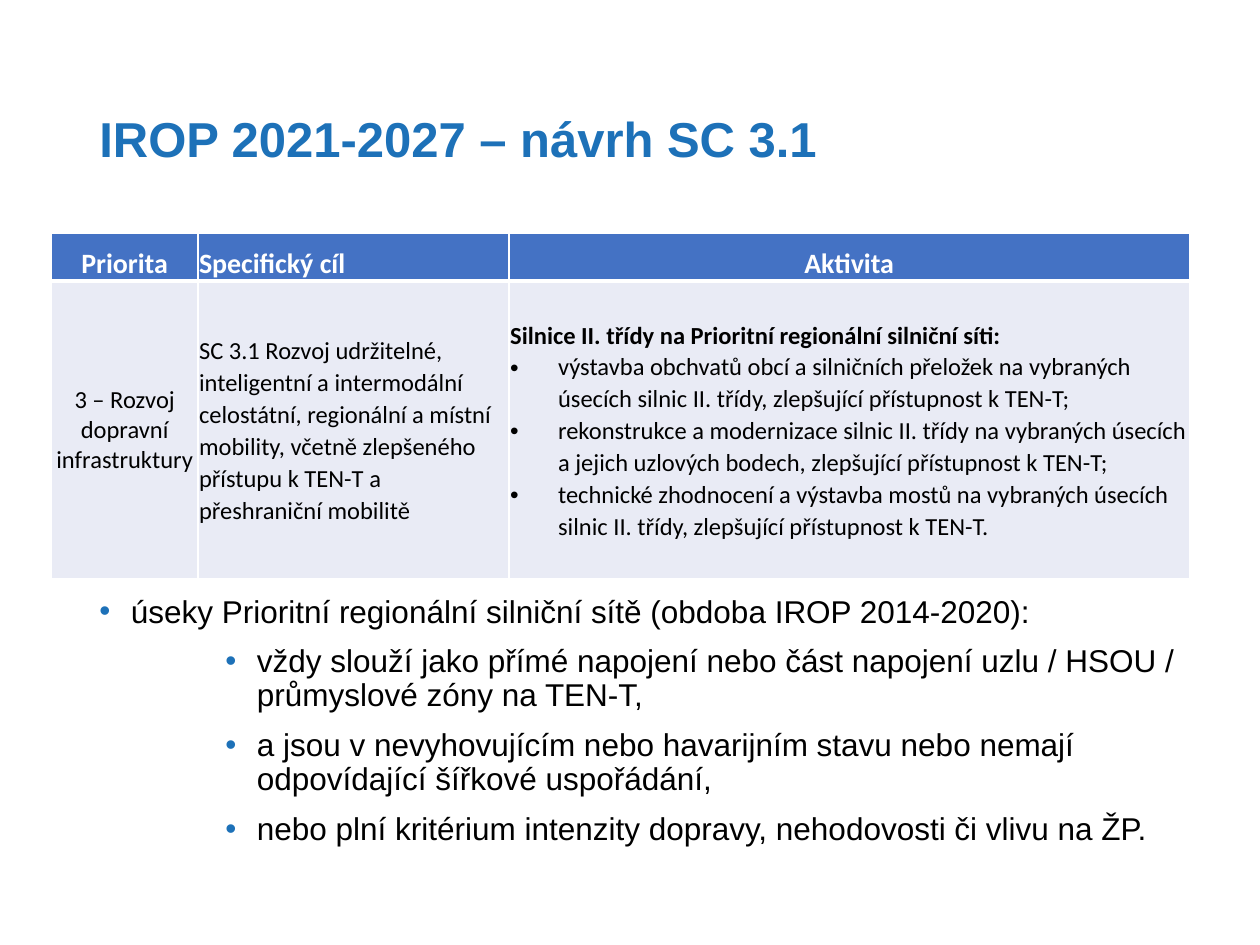
from lxml.etree import SubElement
from pptx import Presentation
from pptx.dml.color import RGBColor
from pptx.enum.text import MSO_ANCHOR as Anchor, PP_ALIGN as Align
from pptx.oxml.ns import qn
from pptx.util import Inches, Pt

BLUE = RGBColor(0x1D, 0x71, 0xB8)
HEADER_BLUE = RGBColor(0x44, 0x72, 0xC4)
PALE = RGBColor(0xE9, 0xEB, 0xF5)
BLACK = RGBColor(0, 0, 0)
WHITE = RGBColor(255, 255, 255)

COLUMNS = [1.16, 2.47, 5.4]
ROWS = [0.38, 2.36]
HEADERS = ["Priorita", "Specifický cíl", "Aktivita"]
PRIORITY = "3 – Rozvoj dopravní infrastruktury"
GOAL = ("SC 3.1 Rozvoj udržitelné, inteligentní a intermodální celostátní, regionální "
        "a místní mobility, včetně zlepšeného přístupu k TEN-T a přeshraniční mobilitě")
ACTIVITY_HEADING = "Silnice II. třídy na Prioritní regionální silniční síti:"
ACTIVITIES = [
    "výstavba obchvatů obcí a silničních přeložek na vybraných úsecích silnic II. třídy, "
    "zlepšující přístupnost k TEN-T;",
    "rekonstrukce a modernizace silnic II. třídy na vybraných úsecích a jejich uzlových "
    "bodech, zlepšující přístupnost k TEN-T;",
    "technické zhodnocení a výstavba mostů na vybraných úsecích silnic II. třídy, "
    "zlepšující přístupnost k TEN-T.",
]
SECTIONS = "úseky Prioritní regionální silniční sítě (obdoba IROP 2014-2020):"
CONDITIONS = [
    "vždy slouží jako přímé napojení nebo část napojení uzlu / HSOU / průmyslové zóny na TEN-T,",
    "a jsou v nevyhovujícím nebo havarijním stavu nebo nemají odpovídající šířkové uspořádání,",
    "nebo plní kritérium intenzity dopravy, nehodovosti či vlivu na ŽP.",
]


class SlideBuilder:
    text_font = "Arial"
    table_font = "Calibri"

    def __init__(self, page):
        self.page = page

    def text_box(self, left, top, width, height, anchor=Anchor.TOP):
        box = self.page.shapes.add_textbox(
            Inches(left), Inches(top), Inches(width), Inches(height))
        box.text_frame.word_wrap = True
        box.text_frame.vertical_anchor = anchor
        return box.text_frame

    def paragraph(self, frame, text, size, color=BLACK, font=text_font, bold=False,
                  align=Align.LEFT, line=1.0, before=0, after=0):
        """Fill the empty first paragraph of the frame, or add another one."""
        para = frame.paragraphs[0]
        if para.runs:
            para = frame.add_paragraph()
            para.space_before = Pt(before)
        para.add_run().text = text
        para.alignment = align
        para.line_spacing = line
        para.space_after = Pt(after)
        para.font.name = font
        para.font.size = Pt(size)
        para.font.bold = bold
        para.font.color.rgb = color
        return para

    def bullet(self, frame, text, size, indent, hanging, color=BLACK, **style):
        para = self.paragraph(frame, text, size, **style)
        properties = para._p.get_or_add_pPr()
        properties.set("marL", str(Inches(indent)))
        properties.set("indent", str(-Inches(hanging)))
        tint = SubElement(properties, qn("a:buClr"))
        SubElement(tint, qn("a:srgbClr"), val=str(color))
        SubElement(properties, qn("a:buFont"), typeface="Arial")
        SubElement(properties, qn("a:buChar"), char="•")
        properties.append(properties.find(qn("a:defRPr")))

    def table(self, left, top, columns, rows):
        table = self.page.shapes.add_table(
            len(rows), len(columns), Inches(left), Inches(top),
            Inches(sum(columns)), Inches(sum(rows))).table
        for column, width in zip(table.columns, columns):
            column.width = Inches(width)
        for row, height in zip(table.rows, rows):
            row.height = Inches(height)
        return table

    def cell(self, cell, fill, anchor, bottom_line=1, top_line=1):
        cell.vertical_anchor = anchor
        cell.margin_left = cell.margin_right = cell.margin_top = Inches(0.01)
        cell.margin_bottom = 0
        properties = cell._tc.get_or_add_tcPr()
        for side, width in (("L", 1), ("R", 1), ("T", top_line), ("B", bottom_line)):
            border = SubElement(properties, qn(f"a:ln{side}"), w=str(Pt(width)))
            SubElement(SubElement(border, qn("a:solidFill")), qn("a:srgbClr"), val=str(WHITE))
        cell.fill.solid()
        cell.fill.fore_color.rgb = fill
        return cell.text_frame


def main():
    deck = Presentation()
    deck.slide_width, deck.slide_height = Inches(10), Inches(7.5)
    builder = SlideBuilder(deck.slides.add_slide(deck.slide_layouts[6]))

    title = builder.text_box(0.69, 0.4, 8.62, 1.45, Anchor.MIDDLE)
    builder.paragraph(title, "IROP 2021-2027 – návrh SC 3.1", 28, BLUE, bold=True, line=0.9)

    table = builder.table(0.41, 1.85, COLUMNS, ROWS)
    font = builder.table_font
    for index, (text, align) in enumerate(zip(HEADERS, (Align.CENTER, Align.LEFT, Align.CENTER))):
        frame = builder.cell(table.cell(0, index), HEADER_BLUE, Anchor.BOTTOM, bottom_line=3)
        builder.paragraph(frame, text, 16, WHITE, font, bold=True, align=align)
    priority, goal, activity = [
        builder.cell(table.cell(1, index), PALE, Anchor.MIDDLE, top_line=3)
        for index in range(len(COLUMNS))]
    builder.paragraph(priority, PRIORITY, 14, font=font, align=Align.CENTER)
    builder.paragraph(goal, GOAL, 14, font=font, line=1.07)
    builder.paragraph(activity, ACTIVITY_HEADING, 14, font=font, bold=True, line=1.07)
    for text in ACTIVITIES:
        builder.bullet(activity, text, 14, 0.38, 0.38, font=font, line=1.07)

    body = builder.text_box(0.69, 4.65, 9.15, 2.15)
    builder.bullet(body, SECTIONS, 18, 0.25, 0.25, BLUE, after=4)
    for text in CONDITIONS:
        builder.bullet(body, text, 18, 1.25, 0.25, BLUE, line=0.9, before=5, after=4)

    deck.save("out.pptx")


if __name__ == "__main__":
    main()
